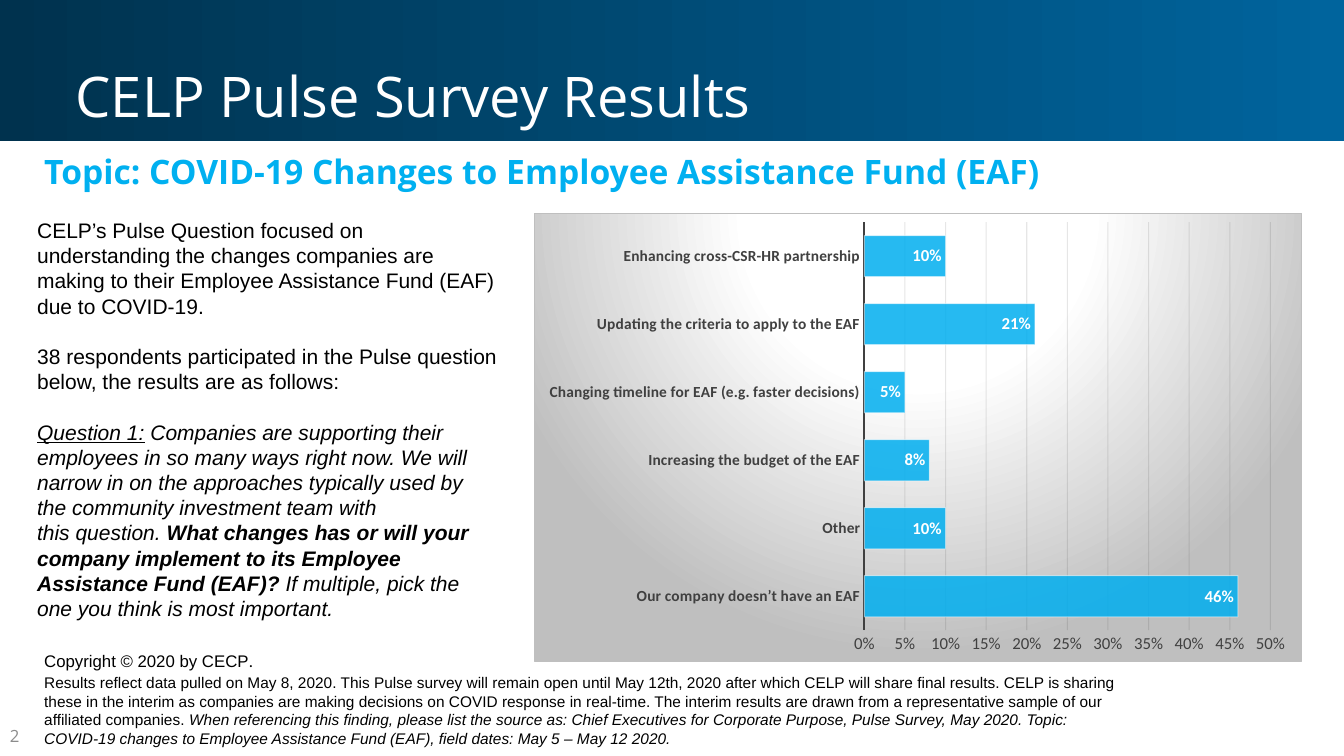
"""Build the pulse survey results slide with its bar chart."""
from lxml import etree
from pptx import Presentation
from pptx import util as u
from pptx.chart.data import CategoryChartData
from pptx.dml.color import RGBColor
from pptx.enum import chart as ch, shapes, text
from pptx.oxml import parse_xml
from pptx.oxml.ns import nsdecls, qn


def rgb(value):
    return RGBColor.from_string(value)


def add_text(at, paragraphs, size, font="Arial", color="000000", anchor=text.MSO_ANCHOR.TOP, wrap=True):
    """Each paragraph is a list of (wording, style letters b, i, u)."""
    box = page.shapes.add_textbox(*map(u.Inches, at))
    frame = box.text_frame
    frame.word_wrap = wrap
    frame.vertical_anchor = anchor
    for index, runs in enumerate(paragraphs):
        para = frame.add_paragraph() if index else frame.paragraphs[0]
        for wording, style in runs:
            span = para.add_run()
            span.text = wording
            span.font.size = u.Pt(size)
            span.font.name = font
            span.font.color.rgb = rgb(color)
            span.font.bold = "b" in style
            span.font.italic = "i" in style
            span.font.underline = "u" in style
    return frame


deck = Presentation()
deck.slide_width, deck.slide_height = u.Inches(13.33), u.Inches(7.5)
page = deck.slides.add_slide(deck.slide_layouts[6])

banner = page.shapes.add_shape(shapes.MSO_SHAPE.RECTANGLE, 0, u.Inches(-0.01), u.Inches(13.33), u.Inches(1.41))
banner.shadow.inherit = False
banner.line.fill.background()
banner.fill.gradient()
banner.fill.gradient_angle = 0
for stop, color in zip(banner.fill.gradient_stops, ("00324E", "00649D")):
    stop.color.rgb = rgb(color)

add_text((0, 7.1, 3, 0.4), [[("2", "")]], 12, "Open Sans", "8C8C8C", text.MSO_ANCHOR.MIDDLE)

title = add_text((0.75, 0.2, 11.5, 1.09), [[("CELP Pulse Survey Results", "")]], 40,
                 "Open Sans", "FFFFFF", text.MSO_ANCHOR.BOTTOM)
title.margin_left = title.margin_top = title.margin_right = title.margin_bottom = 0
title.paragraphs[0].line_spacing = 0.9

add_text((0.34, 1.45, 10.34, 0.5), [[("Topic: COVID-19 Changes to Employee Assistance Fund (EAF)", "b")]],
         24, "Open Sans", "00B0F0", wrap=False)

intro = add_text((0.27, 2.11, 4.76, 4.14), [
    [("CELP’s Pulse Question focused on understanding the changes companies are making to their "
      "Employee Assistance Fund (EAF) due to COVID-19.", "")],
    [("38 respondents participated in the Pulse question below, the results are as follows:", "")],
    [("Question 1:", "iu"),
     (" Companies are supporting their employees in so many ways right now. We will", "i")],
    [("narrow in on the approaches typically used by the community investment team with", "i")],
    [("this question. ", "i"), ("What changes has or will your company implement to its Employee", "bi")],
    [("Assistance Fund (EAF)?", "bi"), (" If multiple, pick the one you think is most important.", "i")],
], 15)
for para in intro.paragraphs[:2]:
    para.space_after = u.Pt(18)

notice = add_text((0.34, 6.41, 2.86, 0.3), [[("Copyright © 2020 by CECP", ""), (".", "")]], 12)
notice.paragraphs[0].runs[1].font.name = "Calibri"

answers = {
    "Our company doesn’t have an EAF": 0.46,
    "Other": 0.1,
    "Increasing the budget of the EAF": 0.08,
    "Changing timeline for EAF (e.g. faster decisions)": 0.05,
    "Updating the criteria to apply to the EAF": 0.21,
    "Enhancing cross-CSR-HR partnership": 0.1,
}
data = CategoryChartData(number_format="0%")
data.categories = list(answers)
data.add_series("Series 1", list(answers.values()))
chart = page.shapes.add_chart(ch.XL_CHART_TYPE.BAR_CLUSTERED, u.Inches(5.3), u.Inches(2.11),
                              u.Inches(7.61), u.Inches(4.46), data).chart
chart.has_legend = False
chart.has_title = False
chart.font.size = u.Pt(10)
chart.font.name = "Calibri"

plot = chart.plots[0]
plot.gap_width = 65
plot.vary_by_categories = False
plot.has_data_labels = True
labels = plot.data_labels
labels.show_value = True
labels.position = ch.XL_LABEL_POSITION.INSIDE_END
labels.number_format, labels.number_format_is_linked = "0%", False

categories, values = chart.category_axis, chart.value_axis
values.minimum_scale, values.maximum_scale, values.major_unit = 0, 0.5, 0.05
values.tick_labels.number_format, values.tick_labels.number_format_is_linked = "0%", False
values.format.line.fill.background()
values.has_major_gridlines = True
grid = values.major_gridlines.format.line
categories.has_major_gridlines = False
for axis in (categories, values):
    axis.major_tick_mark = axis.minor_tick_mark = ch.XL_TICK_MARK.NONE
for font, size, color, bold in (
    (categories.tick_labels.font, 11, "404040", True),
    (values.tick_labels.font, 12, "404040", False),
    (labels.font, 12, "FFFFFF", True),
):
    font.size, font.name, font.bold = u.Pt(size), "Calibri", bold
    font.color.rgb = rgb(color)

bars = plot.series[0].format
bars.fill.solid()
bars.fill.fore_color.rgb = rgb("00AEEF")
for line, color, width in ((categories.format.line, "404040", 1.5),
                           (grid, "0D0D0D", 0.75), (bars.line, "FFFFFF", 0.75)):
    line.color.rgb = rgb(color)
    line.width = u.Pt(width)

root = chart.element if hasattr(chart, "element") else chart._chartSpace
for color, opacity in (("00AEEF", 85), ("FFFFFF", 50), ("0D0D0D", 10)):
    for node in root.iterfind(f".//{qn('c:spPr')}//{qn('a:srgbClr')}[@val='{color}']"):
        etree.SubElement(node, qn("a:alpha")).set("val", str(opacity * 1000))

stops = "".join(f'<a:gs pos="{place * 1000}"><a:srgbClr val="{color}"/></a:gs>'
                for place, color in ((0, "FFFFFF"), (39, "FFFFFF"), (100, "BFBFBF")))
root.find(qn("c:chart")).addnext(parse_xml(
    f'<c:spPr {nsdecls("c", "a")}><a:gradFill><a:gsLst>{stops}</a:gsLst><a:path path="circle">'
    '<a:fillToRect l="50000" t="-80000" r="50000" b="180000"/></a:path></a:gradFill>'
    '<a:ln w="9525"><a:solidFill><a:srgbClr val="BFBFBF"/></a:solidFill></a:ln></c:spPr>'))

area = root.find(f".//{qn('c:plotArea')}")
for node in area.findall(qn("c:layout")):
    area.remove(node)
settings = (("layoutTarget", "inner"), ("xMode", "edge"), ("yMode", "edge"),
            ("x", 0.43), ("y", 0.02), ("w", 0.53), ("h", 0.91))
area.insert(0, parse_xml(
    f'<c:layout {nsdecls("c")}><c:manualLayout>'
    + "".join(f'<c:{name} val="{value}"/>' for name, value in settings)
    + "</c:manualLayout></c:layout>"))

add_text((0.34, 6.63, 10.91, 0.84), [[
    ("Results reflect data pulled on May 8, 2020. This Pulse survey will remain open until May 12th, 2020 "
     "after which CELP will share final results. CELP is sharing these in the interim as companies are making "
     "decisions on COVID response in real-time. The interim results are drawn from a representative sample of "
     "our affiliated companies. ", ""),
    ("When referencing this finding, please list the source as: Chief Executives for Corporate Purpose, Pulse "
     "Survey, May 2020. Topic: COVID-19 changes to Employee Assistance Fund (EAF), field dates: "
     "May 5 – May 12 2020.", "i"),
]], 11)

deck.save("out.pptx")
